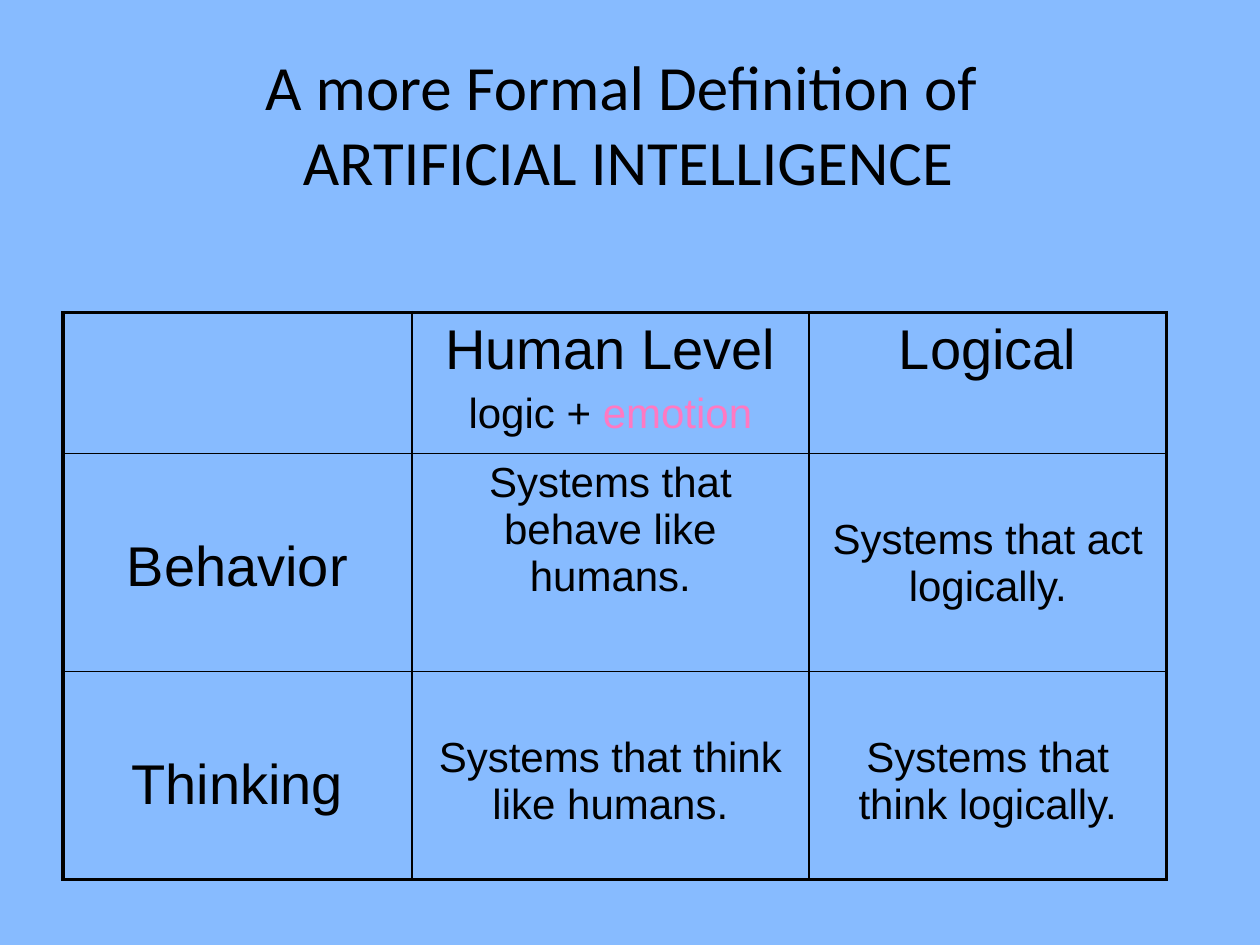
from lxml import etree
from pptx import Presentation
from pptx.dml.color import RGBColor
from pptx.enum.text import MSO_ANCHOR, PP_ALIGN
from pptx.oxml.ns import qn
from pptx.util import Pt

CENTER = PP_ALIGN.CENTER
MIDDLE = MSO_ANCHOR.MIDDLE
BLACK = "000000"
PINK = "FF79C2"
BACKGROUND = "87BBFF"
HEADING_SIZE, BODY_SIZE = 32, 24
THIN, THICK = 1, 2.25
COLUMN_WIDTHS = [199.4, 226.8, 204.5]
ROW_HEIGHTS = [80.6, 124.6, 118.8]
TOP_MARGIN = 3.6
LOWERED_MARGINS = {HEADING_SIZE: 46.8, BODY_SIZE: 36}


def color(value):
    return RGBColor.from_string(value)


def set_values(target, values):
    for name, value in values.items():
        setattr(target, name, value)


class SlideBuilder:
    def __init__(self, slide, font="Arial"):
        self.slide = slide
        self.font = font

    def background(self, value):
        fill = self.slide.background.fill
        fill.solid()
        fill.fore_color.rgb = color(value)

    def run(self, paragraph, text, size, font=None, value=BLACK):
        run = paragraph.add_run()
        run.text = text
        set_values(run.font, {"name": font or self.font, "size": Pt(size)})
        run.font.color.rgb = color(value)

    def title(self, lines, left, top, width, height):
        shape = self.slide.shapes.add_textbox(Pt(left), Pt(top), Pt(width), Pt(height))
        set_values(shape.text_frame, {"word_wrap": True, "vertical_anchor": MIDDLE})
        paragraph = shape.text_frame.paragraphs[0]
        paragraph.alignment = CENTER
        for index, line in enumerate(lines):
            if index:
                paragraph.add_line_break()
            self.run(paragraph, line, 36, "Calibri")

    def borders(self, cell, widths):
        properties = cell._tc.get_or_add_tcPr()
        for side, width in widths.items():
            line = etree.SubElement(properties, qn(f"a:ln{side}"), w=str(Pt(width)))
            fill = etree.SubElement(line, qn("a:solidFill"))
            etree.SubElement(fill, qn("a:srgbClr"), val=BLACK)

    def cell(self, cell, paragraphs, lowered):
        frame = cell.text_frame
        for index, (size, runs) in enumerate(paragraphs):
            paragraph = frame.add_paragraph() if index else frame.paragraphs[0]
            spacing = Pt(size * 0.2) if index else Pt(0)
            set_values(paragraph, {"alignment": CENTER, "space_before": spacing})
            for text, value in runs:
                self.run(paragraph, text, size, value=value)
        margin = LOWERED_MARGINS[paragraphs[0][0]] if lowered else TOP_MARGIN
        cell.margin_top = Pt(margin)

    def table(self, rows, left, top):
        shape = self.slide.shapes.add_table(
            len(ROW_HEIGHTS), len(COLUMN_WIDTHS), Pt(left), Pt(top),
            Pt(sum(COLUMN_WIDTHS)), Pt(sum(ROW_HEIGHTS)))
        table = shape.table
        set_values(table, {"first_row": False, "horz_banding": False})
        for column, width in zip(table.columns, COLUMN_WIDTHS):
            column.width = Pt(width)
        for row, height in zip(table.rows, ROW_HEIGHTS):
            row.height = Pt(height)
        last_row, last_column = len(ROW_HEIGHTS) - 1, len(COLUMN_WIDTHS) - 1
        for r, contents in enumerate(rows):
            for c, (paragraphs, lowered) in enumerate(contents):
                cell = table.cell(r, c)
                outer = {"L": c == 0, "R": c == last_column,
                         "T": r == 0, "B": r == last_row}
                self.borders(cell, {side: THICK if edge else THIN
                                    for side, edge in outer.items()})
                cell.fill.background()
                if paragraphs:
                    self.cell(cell, paragraphs, lowered)


def heading(text):
    return HEADING_SIZE, [(text, BLACK)]


def body(text):
    return BODY_SIZE, [(text, BLACK)]


def main():
    presentation = Presentation()
    set_values(presentation, {"slide_width": Pt(720), "slide_height": Pt(540)})
    builder = SlideBuilder(presentation.slides.add_slide(presentation.slide_layouts[6]))
    builder.background(BACKGROUND)
    builder.title(["A more Formal Definition of ", "ARTIFICIAL INTELLIGENCE"],
                  24, 18, 670, 104.4)
    emotion = (BODY_SIZE, [("logic + ", BLACK), ("emotion", PINK)])
    builder.table([
        [([], False),
         ([heading("Human Level"), emotion], False),
         ([heading("Logical")], False)],
        [([heading("Behavior")], True),
         ([body("Systems that behave like humans.")], False),
         ([body("Systems that act logically.")], True)],
        [([heading("Thinking")], True),
         ([body("Systems that think like humans.")], True),
         ([body("Systems that think logically.")], True)],
    ], 36, 178.6)
    presentation.save("out.pptx")


if __name__ == "__main__":
    main()
